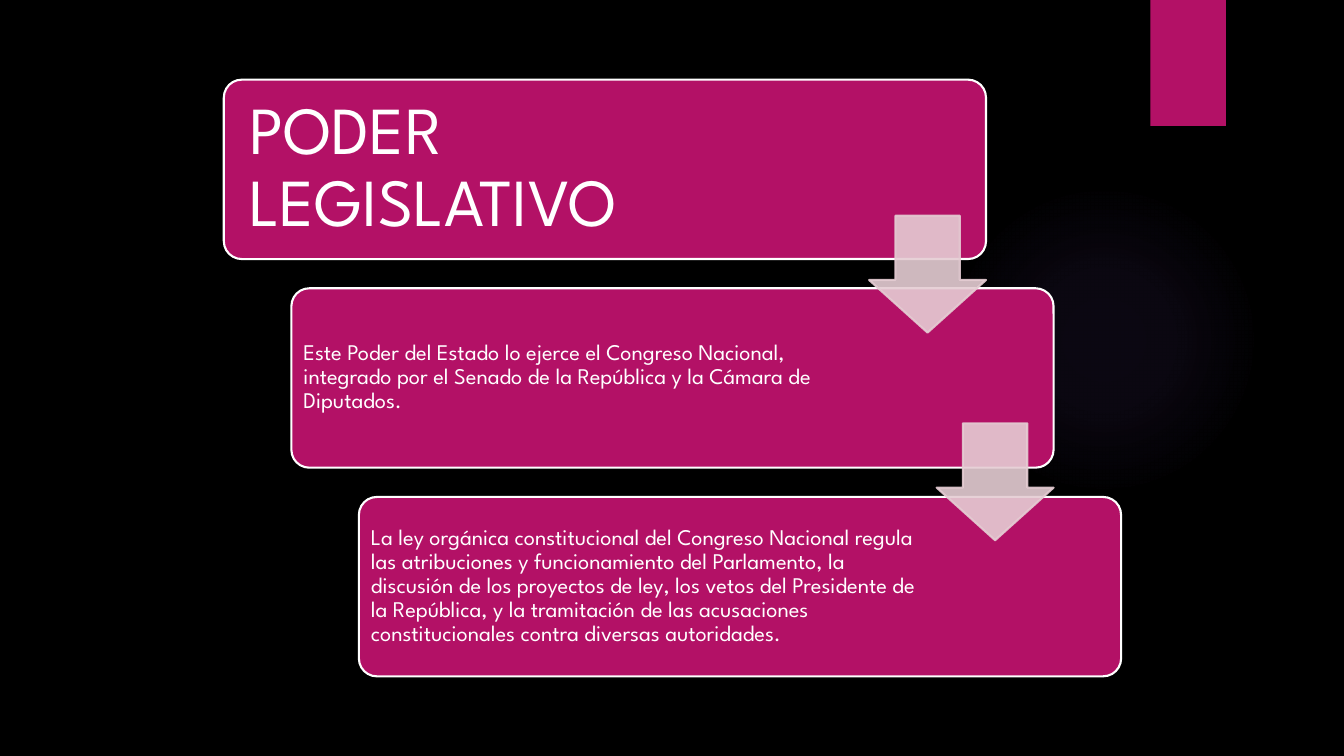
from dataclasses import dataclass

from lxml import etree
from pptx import Presentation
from pptx.dml.color import RGBColor
from pptx.enum.dml import MSO_FILL
from pptx.enum.shapes import MSO_SHAPE
from pptx.enum.text import MSO_ANCHOR, PP_ALIGN
from pptx.oxml import parse_xml
from pptx.oxml.ns import nsdecls, qn
from pptx.util import Inches, Pt

ELLIPSE, RECTANGLE = MSO_SHAPE.OVAL, MSO_SHAPE.RECTANGLE
ROUNDED, DOWN_ARROW = MSO_SHAPE.ROUNDED_RECTANGLE, MSO_SHAPE.DOWN_ARROW
MIDDLE, LEFT, SOLID = MSO_ANCHOR.MIDDLE, PP_ALIGN.LEFT, MSO_FILL.SOLID


@dataclass(frozen=True)
class Theme:
    """Colours, font and type sizes of the slide."""
    background: str = "000000"
    accent: str = "B31166"
    arrow: str = "E5CCD3"
    glow: str = "9B6BF2"
    white: str = "FFFFFF"
    font: str = "League Spartan"
    heading_size: float = 48
    body_size: float = 16
    outline: float = 1.5


@dataclass(frozen=True)
class Box:
    """Left, top, width and height in inches."""
    left: float
    top: float
    width: float
    height: float

    def lengths(self):
        """Return the four measures as lengths."""
        return [Inches(v) for v in (self.left, self.top, self.width, self.height)]

    def shifted(self, dx, dy):
        """Return the box moved by the given inches."""
        return Box(self.left + dx, self.top + dy, self.width, self.height)


@dataclass(frozen=True)
class Step:
    """One card of the staircase."""
    text: str
    size: float
    inset: float


THEME = Theme()
GLOW = Box(9.41, 1.83, 3.08, 3.08)
GLOW_STOPS = ((0, 7), (36, 6), (69, 0))
TAB = Box(11.41, 0, 0.75, 1.25)
CARD = Box(2.22, 0.79, 7.56, 1.78)
CARD_TEXT = Box(2.27, 0.84, 5.64, 1.67)
ARROW = Box(8.62, 2.14, 1.16, 1.16)
STEP_X, STEP_Y, ARROW_STEP_Y = 0.67, 2.07, 2.06
STEPS = (
    Step("PODER LEGISLATIVO", THEME.heading_size, 0.2),
    Step("Este Poder del Estado lo ejerce el Congreso Nacional, integrado por "
         "el Senado de la República y la Cámara de Diputados.",
         THEME.body_size, 0.07),
    Step("La ley orgánica constitucional del Congreso Nacional regula las "
         "atribuciones y funcionamiento del Parlamento, la discusión de los "
         "proyectos de ley, los vetos del Presidente de la República, y la "
         "tramitación de las acusaciones constitucionales contra diversas "
         "autoridades.", THEME.body_size, 0.07),
)


def add_panel(slide, kind, box: Box, fill: str, line: str = "",
              adjustments=(), alpha: int = 100):
    """Draw a filled preset shape, outlined when a line colour is given."""
    panel = slide.shapes.add_shape(kind, *box.lengths())
    panel.shadow.inherit = False
    for index, value in enumerate(adjustments):
        panel.adjustments[index] = value
    panel.fill.solid()
    panel.fill.fore_color.rgb = RGBColor.from_string(fill)
    if line:
        panel.line.color.rgb = RGBColor.from_string(line)
        panel.line.width = Pt(THEME.outline)
    else:
        panel.line.fill.background()
    if alpha < 100:
        for color in panel.element.spPr.iter(qn("a:srgbClr")):
            etree.SubElement(color, qn("a:alpha"), val=str(alpha * 1000))
    return panel


def add_glow(slide) -> None:
    """Draw the faint radial glow behind the cards."""
    glow = add_panel(slide, ELLIPSE, GLOW, THEME.glow)
    stops = "".join(
        f'<a:gs pos="{position * 1000}"><a:srgbClr val="{THEME.glow}">'
        f'<a:alpha val="{alpha * 1000}"/></a:srgbClr></a:gs>'
        for position, alpha in GLOW_STOPS)
    gradient = parse_xml(
        f'<a:gradFill {nsdecls("a")}><a:gsLst>{stops}</a:gsLst>'
        '<a:path path="circle"><a:fillToRect l="50000" t="50000" '
        'r="50000" b="50000"/></a:path></a:gradFill>')
    properties = glow.element.spPr
    properties.replace(properties.find(qn("a:solidFill")), gradient)


def add_text(slide, text: str, *, box: Box, size: float, inset: float,
             color: str = THEME.white) -> None:
    """Write left-aligned, vertically centred text."""
    frame = slide.shapes.add_textbox(*box.lengths()).text_frame
    frame.word_wrap = True
    frame.vertical_anchor = MIDDLE
    frame.margin_left = frame.margin_right = Inches(inset)
    frame.margin_top = frame.margin_bottom = Inches(inset)
    paragraph = frame.paragraphs[0]
    paragraph.text = text
    paragraph.alignment = LEFT
    paragraph.line_spacing = 0.9
    font = paragraph.runs[0].font
    font.name = THEME.font
    font.size = Pt(size)
    font.color.rgb = RGBColor.from_string(color)


def main() -> None:
    """Build the slide and save it."""
    deck = Presentation()
    deck.slide_width, deck.slide_height = Inches(13.33), Inches(7.5)
    slide = deck.slides.add_slide(deck.slide_layouts[6])
    slide.background.fill.solid()
    slide.background.fill.fore_color.rgb = RGBColor.from_string(THEME.background)

    add_glow(slide)
    add_panel(slide, RECTANGLE, TAB, THEME.accent)
    for index, step in enumerate(STEPS):
        dx, dy = index * STEP_X, index * STEP_Y
        add_panel(slide, ROUNDED, CARD.shifted(dx, dy), THEME.accent,
                  THEME.white, (0.1,))
        add_text(slide, step.text, box=CARD_TEXT.shifted(dx, dy),
                 size=step.size, inset=step.inset)
    for index in range(len(STEPS) - 1):
        add_panel(slide, DOWN_ARROW,
                  ARROW.shifted(index * STEP_X, index * ARROW_STEP_Y),
                  THEME.arrow, THEME.arrow, (0.55, 0.45), alpha=90)
    deck.save("out.pptx")


if __name__ == "__main__":
    main()
